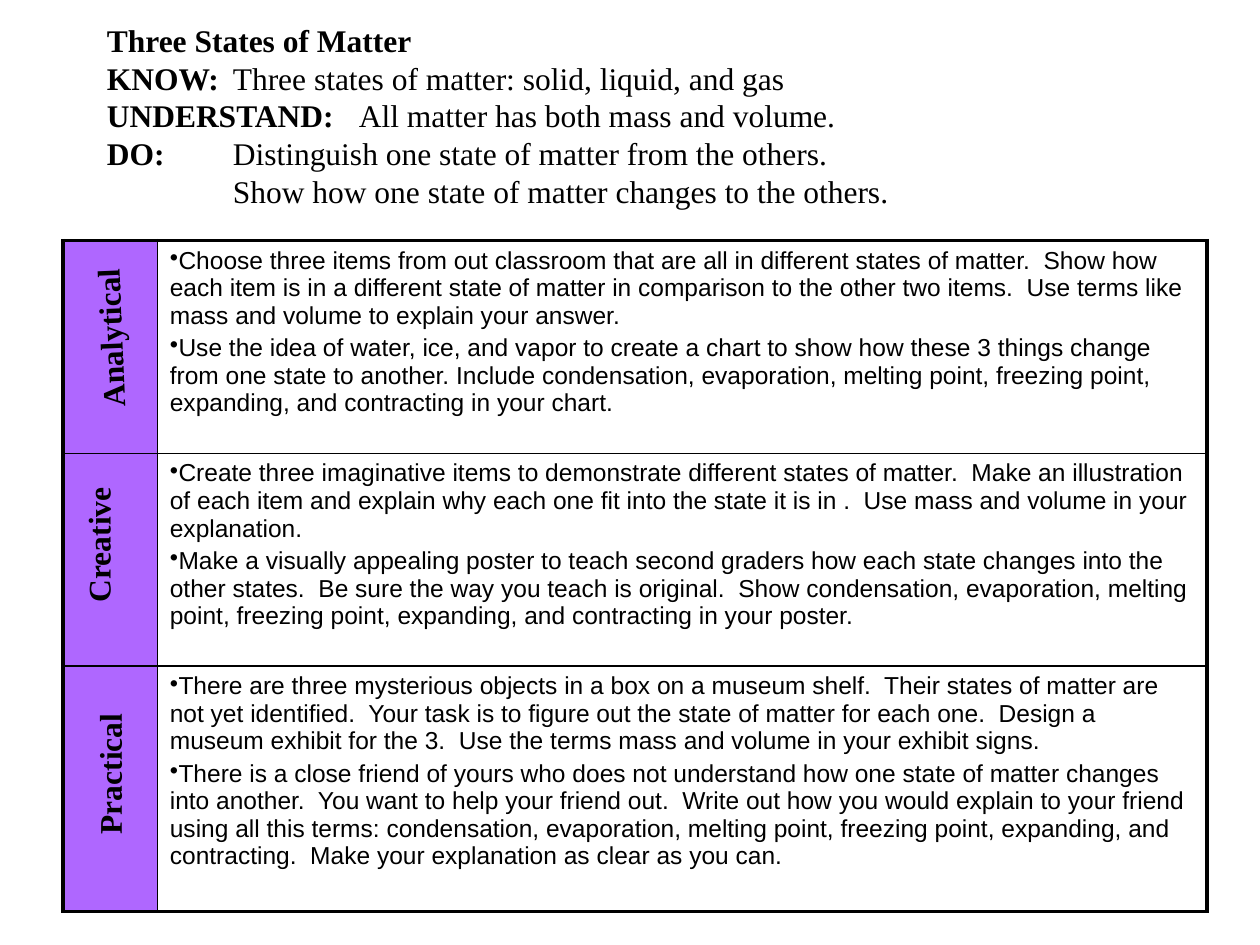
from dataclasses import dataclass

from lxml.etree import SubElement
from pptx import Presentation
from pptx.dml.color import RGBColor
from pptx.enum.text import MSO_ANCHOR as Anchor, MSO_AUTO_SIZE as AutoSize, PP_ALIGN as Align
from pptx.oxml.ns import qn
from pptx.util import Cm, Pt


@dataclass(frozen=True)
class Theme:
    ink: RGBColor = RGBColor(0x00, 0x00, 0x00)
    paper: RGBColor = RGBColor(0xFF, 0xFF, 0xFF)
    violet: RGBColor = RGBColor(0xAF, 0x67, 0xFF)
    serif: str = "Times New Roman"
    sans: str = "Arial"
    heading: float = 18
    task: float = 14
    outer_line: float = 2.25
    inner_line: float = 1


@dataclass(frozen=True)
class Goal:
    term: str
    detail: str = ""


@dataclass(frozen=True)
class Strand:
    name: str
    height: float
    label_box: tuple[float, float, float, float]
    rotation: float
    direction: str
    tasks: tuple[str, str]


THEME = Theme()

GOALS = [
    Goal("Three States of Matter"),
    Goal("KNOW:", "\tThree states of matter: solid, liquid, and gas"),
    Goal("UNDERSTAND:", "\tAll matter has both mass and volume."),
    Goal("DO:", "\t\tDistinguish one state of matter from the others."),
    Goal("", "\t\tShow how one state of matter changes to the others."),
]

STRANDS = [
    Strand("Analytical", 4.29, (1.7, 4.88, 0.64, 3.58), 177.6, "eaVert", (
        "Choose three items from out classroom that are all in different states of matter.  "
        "Show how each item is in a different state of matter in comparison to the other two "
        "items.  Use terms like mass and volume to explain your answer.",
        "Use the idea of water, ice, and vapor to create a chart to show how these 3 things "
        "change from one state to another. Include condensation, evaporation, melting point, "
        "freezing point, expanding, and contracting in your chart.")),
    Strand("Creative", 4.29, (1.47, 9.09, 1.7, 3.3), 180, "eaVert", (
        "Create three imaginative items to demonstrate different states of matter.  Make an "
        "illustration of each item and explain why each one fit into the state it is in .  "
        "Use mass and volume in your explanation.",
        "Make a visually appealing poster to teach second graders how each state changes into "
        "the other states.  Be sure the way you teach is original.  Show condensation, "
        "evaporation, melting point, freezing point, expanding, and contracting in your poster.")),
    Strand("Practical", 4.95, (0.38, 15.09, 3.66, 1.02), 270, "horz", (
        "There are three mysterious objects in a box on a museum shelf.  Their states of matter "
        "are not yet identified.  Your task is to figure out the state of matter for each one.  "
        "Design a museum exhibit for the 3.  Use the terms mass and volume in your exhibit signs.",
        "There is a close friend of yours who does not understand how one state of matter "
        "changes into another.  You want to help your friend out.  Write out how you would "
        "explain to your friend using all this terms: condensation, evaporation, melting point, "
        "freezing point, expanding, and contracting.  Make your explanation as clear as you can.")),
]


def style_run(run, face: str, size: float, bold: bool = False) -> None:
    run.font.name, run.font.size, run.font.bold = face, Pt(size), bold
    run.font.color.rgb = THEME.ink


def fill_title(title, goals: list[Goal]) -> None:
    title.left, title.top, title.width, title.height = Cm(1.9), Cm(0), Cm(21.6), Cm(4.65)
    frame = title.text_frame
    frame.auto_size, frame.word_wrap = AutoSize.NONE, True
    frame.vertical_anchor = Anchor.MIDDLE
    frame.text = "\n".join(goal.term for goal in goals)
    for goal, line in zip(goals, frame.paragraphs):
        line.alignment = Align.LEFT
        for term in line.runs:
            style_run(term, THEME.serif, THEME.heading, bold=True)
        if goal.detail:
            detail = line.add_run()
            detail.text = goal.detail
            style_run(detail, THEME.serif, THEME.heading)


def format_cell(cell, fill: RGBColor, outer_edges: set[str]) -> None:
    """Fill a cell, with heavy lines on the edges of the table."""
    properties = cell._tc.get_or_add_tcPr()
    for edge in "LRTB":
        width = THEME.outer_line if edge in outer_edges else THEME.inner_line
        line = SubElement(properties, qn(f"a:ln{edge}"), w=str(Pt(width)))
        colour = SubElement(line, qn("a:solidFill"))
        SubElement(colour, qn("a:srgbClr"), val=str(THEME.ink))
    cell.fill.solid()
    cell.fill.fore_color.rgb = fill


def write_tasks(cell, tasks: tuple[str, str]) -> None:
    cell.text_frame.text = "\n".join(tasks)
    for task in cell.text_frame.paragraphs:
        task.space_before = Pt(0.2 * THEME.task)
        properties = task._p.get_or_add_pPr()
        properties.set("marL", "0")
        properties.set("indent", "0")
        SubElement(properties, qn("a:buChar"), char="•")
        style_run(task.runs[0], THEME.sans, THEME.task)


def add_task_table(slide, strands: list[Strand]) -> None:
    label_width, task_width = 1.9, 21.16
    total = sum(strand.height for strand in strands)
    table = slide.shapes.add_table(
        len(strands), 2, Cm(1.27), Cm(4.85), Cm(label_width + task_width), Cm(total)).table
    table.first_row = table.horz_banding = False
    table.columns[0].width, table.columns[1].width = Cm(label_width), Cm(task_width)
    for index, strand in enumerate(strands):
        table.rows[index].height = Cm(strand.height)
        ends = {"T"} if index == 0 else {"B"} if index == len(strands) - 1 else set()
        format_cell(table.cell(index, 0), THEME.violet, ends | {"L"})
        format_cell(table.cell(index, 1), THEME.paper, ends | {"R"})
        write_tasks(table.cell(index, 1), strand.tasks)


def add_strand_label(slide, strand: Strand) -> None:
    label = slide.shapes.add_textbox(*map(Cm, strand.label_box))
    label.rotation = strand.rotation
    frame = label.text_frame
    frame.word_wrap = True
    frame._txBody.bodyPr.set("vert", strand.direction)
    frame.text = strand.name
    name = frame.paragraphs[0]
    name.alignment = Align.CENTER
    name.space_before = Pt(0.5 * THEME.heading)
    style_run(name.runs[0], THEME.serif, THEME.heading, bold=True)


def main() -> None:
    deck = Presentation()
    deck.slide_width, deck.slide_height = Cm(25.4), Cm(19.05)
    slide = deck.slides.add_slide(deck.slide_layouts[5])

    # Learning goals
    fill_title(slide.shapes.title, GOALS)

    # Tasks, one row per strand
    add_task_table(slide, STRANDS)

    # Upright strand names over the violet column
    for strand in STRANDS:
        add_strand_label(slide, strand)

    deck.save("out.pptx")


if __name__ == "__main__":
    main()
